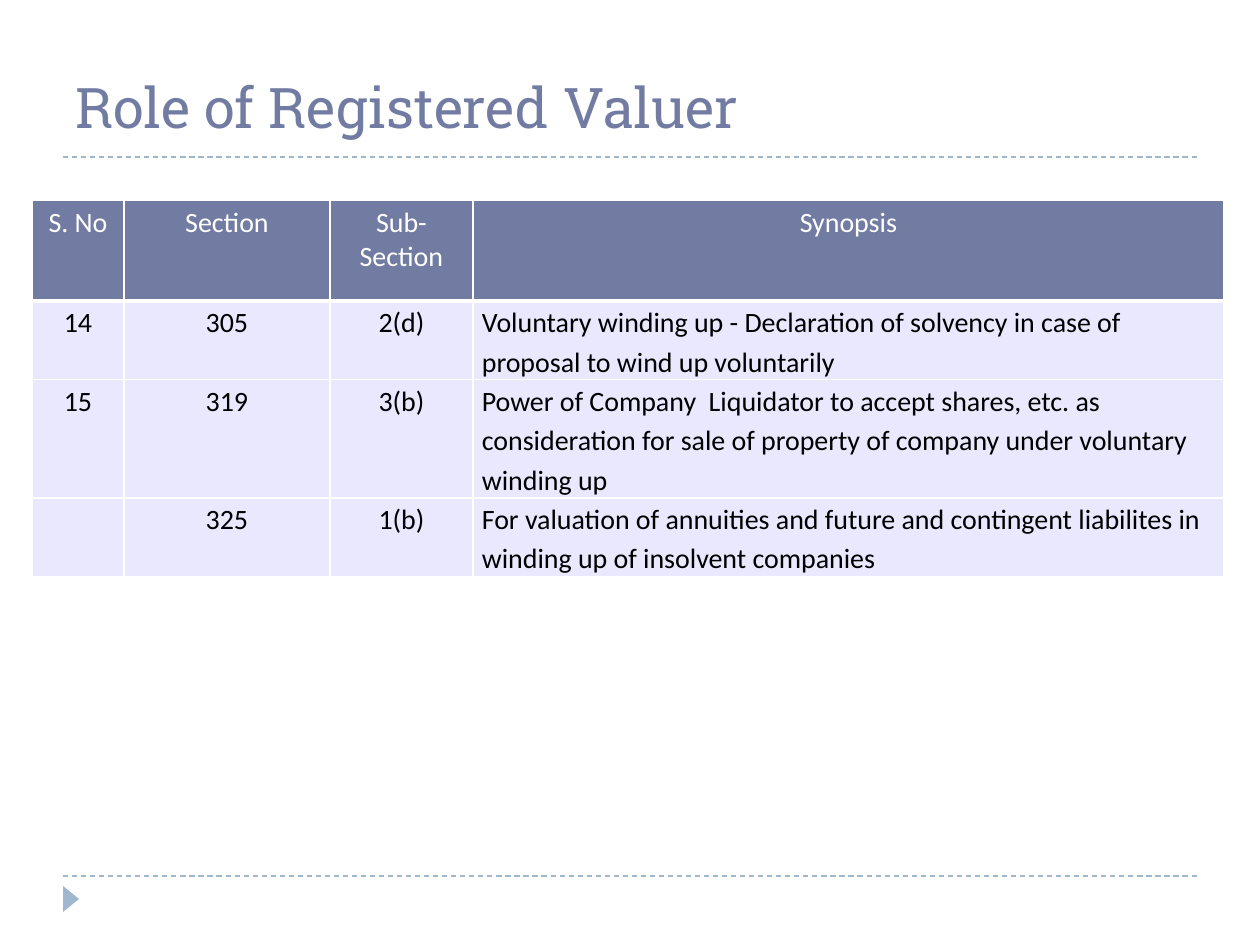
from dataclasses import dataclass

from lxml import etree
from pptx import Presentation
from pptx import util as u
from pptx.dml.color import RGBColor
from pptx.enum import dml, shapes, text
from pptx.oxml import ns

EMU_PER_PX = 914400 / 126


@dataclass(frozen=True)
class Theme:
    accent: str = "727CA3"
    trim: str = "9FB8CD"
    band: str = "EAE8FE"
    light: str = "FFFFFF"
    dark: str = "000000"
    title_font: str = "Roboto Slab"
    body_font: str = "Calibri"
    title_size: int = 32
    body_size: int = 16


@dataclass(frozen=True)
class CellStyle:
    fill: str
    ink: str
    bottom_border: int
    line_spacing: float
    side_margin: int
    end_margin: int


THEME = Theme()
HEADER = CellStyle(THEME.accent, THEME.light, 3, 1.0, 13, 6)
BODY = CellStyle(THEME.band, THEME.dark, 1, 1.15, 9, 0)

COLUMN_WIDTHS = (92, 206, 143, 751)
ROW_HEIGHTS = (101, 78, 118, 78)
SYNOPSIS_COLUMN = 3
ROWS = (
    ("S. No", "Section", "Sub- Section", "Synopsis"),
    ("14", "305", "2(d)",
     "Voluntary winding up - Declaration of solvency in case of "
     "proposal to wind up voluntarily"),
    ("15", "319", "3(b)",
     "Power of Company  Liquidator to accept shares, etc. as "
     "consideration for sale of property of company under voluntary winding up"),
    ("", "325", "1(b)",
     "For valuation of annuities and future and contingent liabilites in "
     "winding up of insolvent companies"),
)


def px(length: int) -> u.Emu:
    return u.Emu(round(length * EMU_PER_PX))


def color(value: str) -> RGBColor:
    return RGBColor.from_string(value)


def add_span(para, words: str, font: str, size: int, ink: str) -> None:
    span = para.add_run()
    span.text = words
    span.font.name = font
    span.font.size = u.Pt(size)
    span.font.bold = False
    span.font.color.rgb = color(ink)


def add_rule(page, y: int) -> None:
    """Draw a dashed line across the page between its margins."""
    rule = page.shapes.add_connector(
        shapes.MSO_CONNECTOR.STRAIGHT, px(63), px(y), px(1197), px(y))
    rule.line.color.rgb = color(THEME.trim)
    rule.line.width = u.Pt(0.75)
    rule.line.dash_style = dml.MSO_LINE.DASH
    etree.SubElement(rule._element.spPr, ns.qn("a:effectLst"))


def add_page_marker(page) -> None:
    marker = page.shapes.add_shape(
        shapes.MSO_SHAPE.ISOSCELES_TRIANGLE, px(58), px(891), px(26), px(16))
    marker.rotation = 90
    marker.shadow.inherit = False
    marker.fill.solid()
    marker.fill.fore_color.rgb = color(THEME.trim)
    marker.line.fill.background()


def fill_title(page) -> None:
    title = page.shapes.title
    title.left, title.top, title.width, title.height = (
        px(63), px(10), px(1134), px(136))
    frame = title.text_frame
    frame.auto_size = text.MSO_AUTO_SIZE.NONE
    frame.vertical_anchor = text.MSO_ANCHOR.BOTTOM
    para = frame.paragraphs[0]
    para.alignment = text.PP_ALIGN.LEFT
    add_span(para, "Role of Registered Valuer",
             THEME.title_font, THEME.title_size, THEME.accent)


def add_borders(cell, bottom: int) -> None:
    properties = cell._tc.get_or_add_tcPr()
    for side, width in (("L", 1), ("R", 1), ("T", 1), ("B", bottom)):
        border = etree.SubElement(
            properties, ns.qn(f"a:ln{side}"), w=str(u.Pt(width)))
        fill = etree.SubElement(border, ns.qn("a:solidFill"))
        etree.SubElement(fill, ns.qn("a:srgbClr"), val=THEME.light)


def fill_cell(cell, words: str, style: CellStyle,
              alignment: text.PP_ALIGN) -> None:
    add_borders(cell, style.bottom_border)
    cell.fill.solid()
    cell.fill.fore_color.rgb = color(style.fill)
    cell.margin_left = cell.margin_right = px(style.side_margin)
    cell.margin_top = cell.margin_bottom = px(style.end_margin)
    para = cell.text_frame.paragraphs[0]
    para.alignment = alignment
    para.line_spacing = style.line_spacing
    if words:
        add_span(para, words, THEME.body_font, THEME.body_size, style.ink)


def add_sections_table(page) -> None:
    table = page.shapes.add_table(
        len(ROWS), len(COLUMN_WIDTHS), px(32), px(200),
        px(sum(COLUMN_WIDTHS)), px(sum(ROW_HEIGHTS))).table
    for column, width in zip(table.columns, COLUMN_WIDTHS):
        column.width = px(width)
    for row, height in zip(table.rows, ROW_HEIGHTS):
        row.height = px(height)
    for r, entries in enumerate(ROWS):
        for c, words in enumerate(entries):
            is_synopsis = r > 0 and c == SYNOPSIS_COLUMN
            fill_cell(table.cell(r, c), words, BODY if r else HEADER,
                      text.PP_ALIGN.LEFT if is_synopsis
                      else text.PP_ALIGN.CENTER)


def main() -> None:
    deck = Presentation()
    deck.slide_width, deck.slide_height = px(1260), px(945)
    page = deck.slides.add_slide(deck.slide_layouts.get_by_name("Title Only"))
    for y in (876, 157):
        add_rule(page, y)
    add_page_marker(page)
    fill_title(page)
    add_sections_table(page)
    deck.save("out.pptx")


if __name__ == "__main__":
    main()
